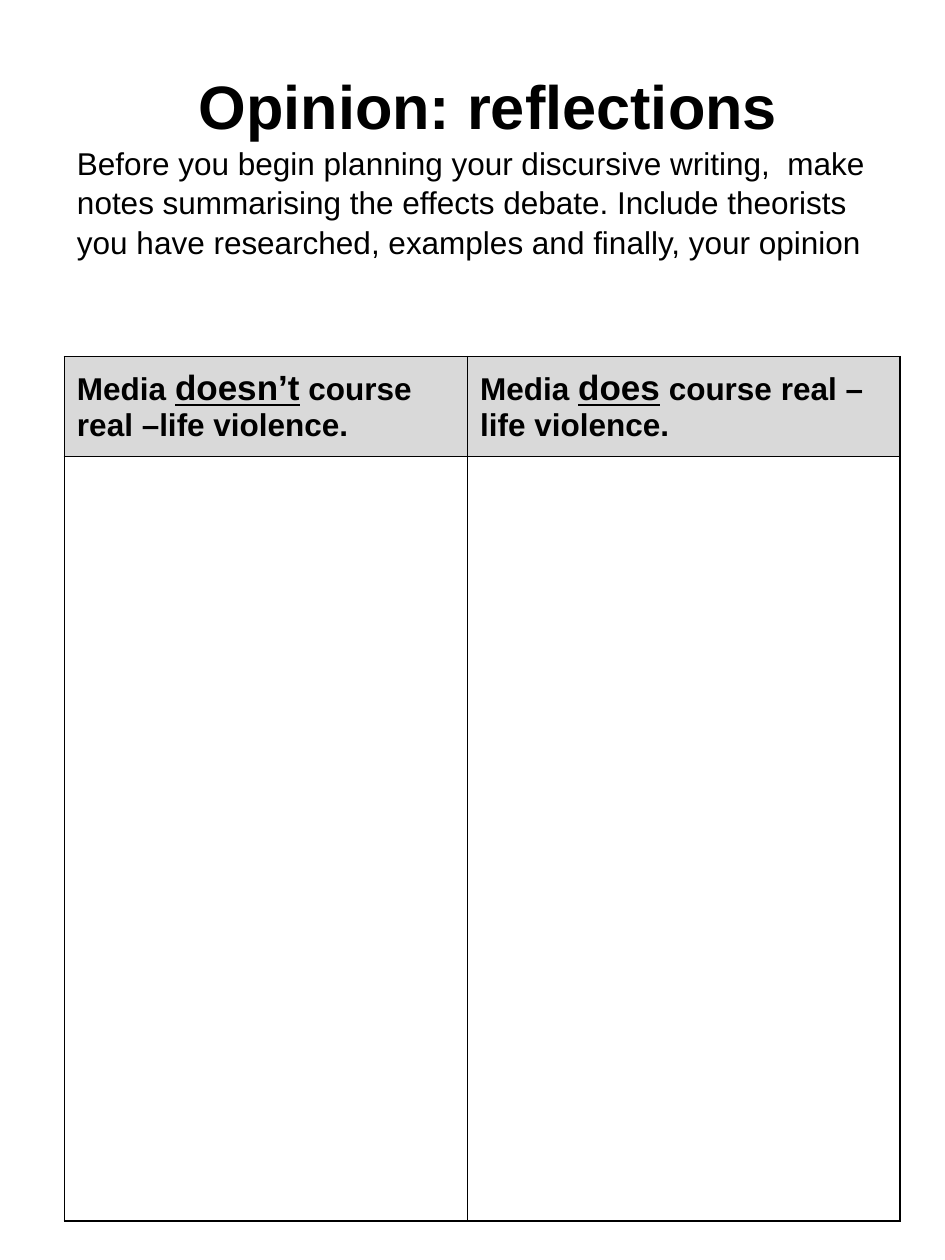
"""Build a one-page reflection worksheet with a two-column notes table."""
from lxml import etree
from pptx import Presentation
from pptx import util as u
from pptx.dml.color import RGBColor
from pptx.enum import text
from pptx.oxml import ns

BLACK = RGBColor(0x00, 0x00, 0x00)
GREY = RGBColor(0xD9, 0xD9, 0xD9)
FONT = "Arial"

TITLE = "Opinion: reflections"
INSTRUCTIONS = (
    "Before you begin planning your discursive writing,  make notes summarising "
    "the effects debate. Include theorists you have researched, examples and "
    "finally, your opinion"
)
HEADINGS = [
    ("Media ", "doesn’t", " course real –life violence."),
    ("Media ", "does", " course real –life violence."),
]
COLUMN_WIDTHS = [230.4, 247]
ROW_HEIGHTS = [57, 437]
TABLE_LEFT, TABLE_TOP = 36.8, 203.8
CELL_MARGIN = 7.2


def add_text(paragraph, content, size=18, bold=False, underline=False):
    run = paragraph.add_run()
    run.text = content
    run.font.name = FONT
    run.font.size = u.Pt(size)
    run.font.bold = bold
    run.font.underline = underline
    run.font.color.rgb = BLACK


def place(shape, left, top, width, height, anchor):
    shape.left, shape.top = u.Pt(left), u.Pt(top)
    shape.width, shape.height = u.Pt(width), u.Pt(height)
    frame = shape.text_frame
    frame.word_wrap = True
    frame.auto_size = text.MSO_AUTO_SIZE.NONE
    frame.vertical_anchor = anchor
    return frame.paragraphs[0]


def add_borders(cell):
    properties = cell._tc.get_or_add_tcPr()
    for side in ("lnL", "lnR", "lnT", "lnB"):
        line = etree.SubElement(properties, ns.qn(f"a:{side}"), w=str(u.Pt(1)))
        fill = etree.SubElement(line, ns.qn("a:solidFill"))
        etree.SubElement(fill, ns.qn("a:srgbClr"), val=str(BLACK))


def add_notes_table(slide):
    table = slide.shapes.add_table(
        len(ROW_HEIGHTS), len(COLUMN_WIDTHS), u.Pt(TABLE_LEFT), u.Pt(TABLE_TOP),
        u.Pt(sum(COLUMN_WIDTHS)), u.Pt(sum(ROW_HEIGHTS)),
    ).table
    for column, width in zip(table.columns, COLUMN_WIDTHS):
        column.width = u.Pt(width)
    for row, height in zip(table.rows, ROW_HEIGHTS):
        row.height = u.Pt(height)
    for cell in table.iter_cells():
        cell.margin_left = cell.margin_right = u.Pt(CELL_MARGIN)
        cell.margin_top = cell.margin_bottom = u.Pt(CELL_MARGIN)
        add_borders(cell)
        cell.fill.background()
    for cell, (before, stressed, after) in zip(table.rows[0].cells, HEADINGS):
        cell.fill.solid()
        cell.fill.fore_color.rgb = GREY
        paragraph = cell.text_frame.paragraphs[0]
        add_text(paragraph, before, bold=True)
        add_text(paragraph, stressed, size=20, bold=True, underline=True)
        add_text(paragraph, after, bold=True)


def main():
    presentation = Presentation()
    presentation.slide_width, presentation.slide_height = u.Pt(540), u.Pt(720)
    slide = presentation.slides.add_slide(presentation.slide_layouts[1])

    title = place(slide.shapes.title, 36, 0, 486, 120, text.MSO_ANCHOR.MIDDLE)
    title.alignment = text.PP_ALIGN.CENTER
    add_text(title, TITLE, size=35, bold=True)

    body = place(slide.placeholders[1], 36.8, 77.8, 486, 126, text.MSO_ANCHOR.TOP)
    body.space_before = u.Pt(0)
    body.line_spacing = 1.04
    properties = body._p.get_or_add_pPr()
    properties.set("marL", "0")
    properties.set("indent", "0")
    etree.SubElement(properties, ns.qn("a:buNone"))
    add_text(body, INSTRUCTIONS)

    add_notes_table(slide)
    presentation.save("out.pptx")


if __name__ == "__main__":
    main()
